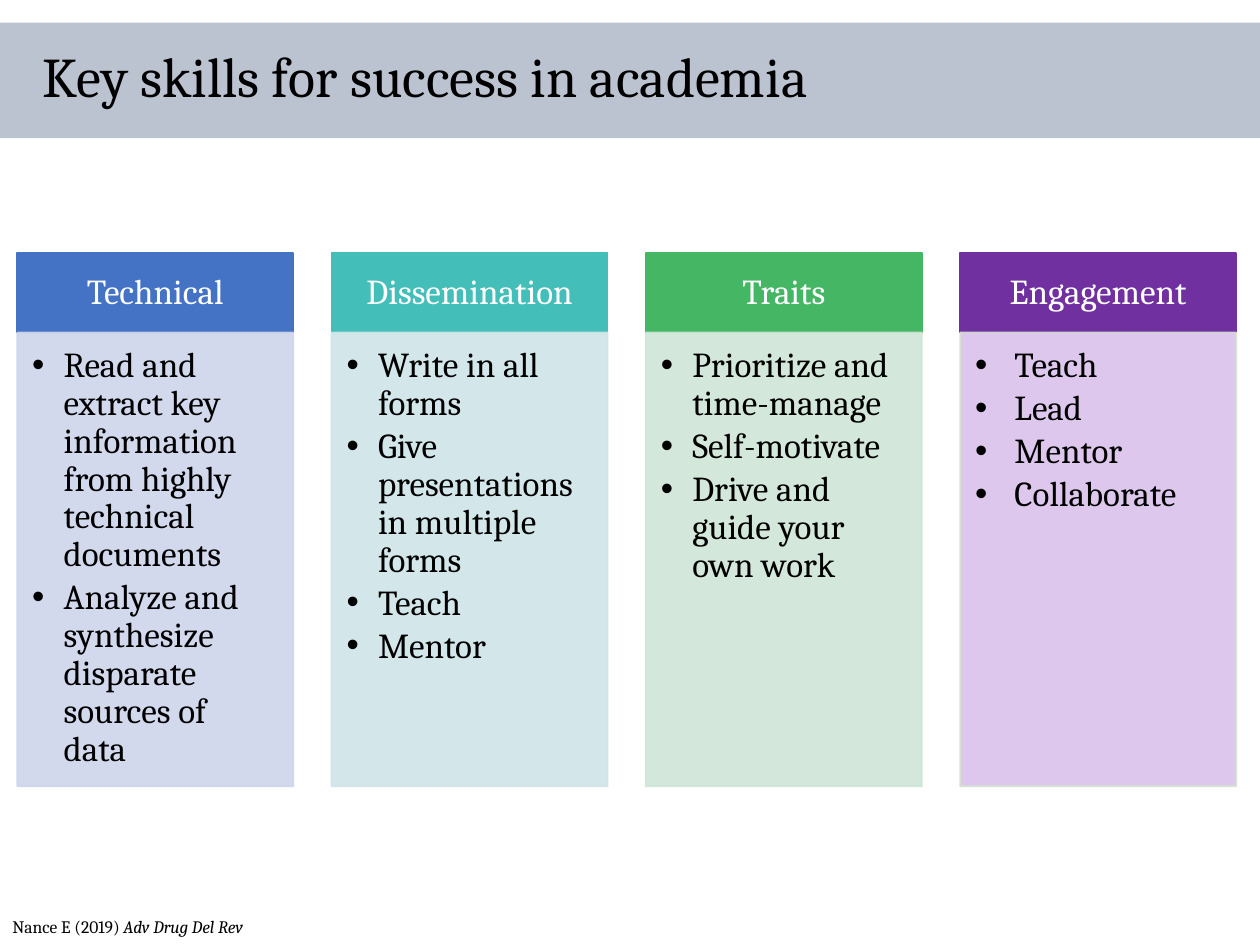
from lxml.etree import SubElement
from pptx import Presentation
from pptx.dml.color import RGBColor
from pptx.enum.shapes import MSO_SHAPE
from pptx.enum.text import MSO_ANCHOR, MSO_AUTO_SIZE, PP_ALIGN
from pptx.oxml.ns import qn
from pptx.util import Pt

COLORS = {
    "black": "000000", "white": "FFFFFF", "band": "203864",
    "blue": "4472C4", "pale blue": "CFD5EA",
    "teal": "43BEB9", "pale teal": "CFE5E8",
    "green": "45B664", "pale green": "CFE5D8",
    "purple": "7030A0", "pale purple": "DAC2EC", "purple edge": "D5E3CF",
}

# heading, heading color, list color, list edge color, list indent, skills
COLUMNS = [
    ("Technical", "blue", "pale blue", "pale blue", 18, [
        "Read and extract key information from highly technical documents",
        "Analyze and synthesize disparate sources of data"]),
    ("Dissemination", "teal", "pale teal", "pale teal", 18, [
        "Write in all forms", "Give presentations in multiple forms",
        "Teach", "Mentor"]),
    ("Traits", "green", "pale green", "pale green", 18, [
        "Prioritize and time-manage", "Self-motivate",
        "Drive and guide your own work"]),
    ("Engagement", "purple", "pale purple", "purple edge", 22.5, [
        "Teach", "Lead", "Mentor", "Collaborate"]),
]
COLUMN_LEFT, COLUMN_STEP, COLUMN_WIDTH = 9.9, 179.6, 157.7
HEADING_TOP, HEADING_HEIGHT, LIST_HEIGHT = 144.8, 45.3, 259.3


class SlideBuilder:
    font_name = "Cambria"

    def __init__(self, slide):
        self.slide = slide

    def set_opacity(self, fill, percent):
        color = fill.fore_color._xFill.find(qn("a:srgbClr"))
        SubElement(color, qn("a:alpha"), val=str(percent * 1000))

    def format_text(self, frame, size, color, margins, anchor, align=PP_ALIGN.LEFT,
                    line_spacing=0.9):
        frame.word_wrap = True
        frame.vertical_anchor = anchor
        (frame.margin_left, frame.margin_top,
         frame.margin_right, frame.margin_bottom) = map(Pt, margins)
        for paragraph in frame.paragraphs:
            paragraph.alignment = align
            paragraph.line_spacing = line_spacing
            for run in paragraph.runs:
                run.font.name = self.font_name
                run.font.size = Pt(size)
                run.font.color.rgb = RGBColor.from_string(COLORS[color])

    def rectangle(self, left, top, width, height, color, edge=None, opacity=100):
        shape = self.slide.shapes.add_shape(
            MSO_SHAPE.RECTANGLE, Pt(left), Pt(top), Pt(width), Pt(height))
        shape.shadow.inherit = False
        fills = [shape.fill]
        if edge:
            shape.line.width = Pt(1)
            fills.append(shape.line.fill)
        else:
            shape.line.fill.background()
        for fill, name in zip(fills, (color, edge)):
            fill.solid()
            fill.fore_color.rgb = RGBColor.from_string(COLORS[name])
            if opacity < 100:
                self.set_opacity(fill, opacity)
        return shape

    def title(self, text):
        title = self.slide.shapes.title
        title.left, title.top, title.width, title.height = map(Pt, (17.3, 13, 702.7, 65))
        title.text_frame.text = text
        title.text_frame.auto_size = MSO_AUTO_SIZE.NONE
        self.format_text(title.text_frame, 32, "black", (7.2, 3.6, 7.2, 3.6),
                         MSO_ANCHOR.MIDDLE)
        band = self.rectangle(0, 13, 720, 66, "band", opacity=30)
        title.element.addprevious(band.element)

    def heading(self, left, text, color):
        shape = self.rectangle(left, HEADING_TOP, COLUMN_WIDTH, HEADING_HEIGHT,
                               color, color)
        shape.text_frame.text = text
        self.format_text(shape.text_frame, 20, "white", (11.2, 6.4, 11.2, 6.4),
                         MSO_ANCHOR.MIDDLE, PP_ALIGN.CENTER)

    def bullet_list(self, left, items, color, edge, indent):
        shape = self.rectangle(left, HEADING_TOP + HEADING_HEIGHT, COLUMN_WIDTH,
                               LIST_HEIGHT, color, edge, opacity=90)
        frame = shape.text_frame
        frame.text = "\n".join(items)
        self.format_text(frame, 20, "black", (8.5, 8.5, 11.4, 12.8), MSO_ANCHOR.TOP)
        for paragraph in frame.paragraphs:
            paragraph.space_after = Pt(3)
            properties = paragraph._p.get_or_add_pPr()
            properties.set("marL", str(Pt(indent)))
            properties.set("indent", str(-Pt(indent)))
            SubElement(properties, qn("a:buFont"), typeface="Arial")
            SubElement(properties, qn("a:buChar"), char="•")

    def citation(self, author, journal):
        box = self.slide.shapes.add_textbox(Pt(0), Pt(520), Pt(235.4), Pt(19.4))
        paragraph = box.text_frame.paragraphs[0]
        paragraph.add_run().text = author
        journal_run = paragraph.add_run()
        journal_run.text = journal
        journal_run.font.italic = True
        self.format_text(box.text_frame, 10, "black", (7.2, 3.6, 7.2, 3.6),
                         MSO_ANCHOR.TOP, line_spacing=1.0)


def main():
    presentation = Presentation()
    presentation.slide_width, presentation.slide_height = Pt(720), Pt(540)
    title_only = presentation.slide_layouts[5]
    builder = SlideBuilder(presentation.slides.add_slide(title_only))

    builder.title("Key skills for success in academia")
    for index, (heading, color, list_color, edge, indent, skills) in enumerate(COLUMNS):
        left = COLUMN_LEFT + index * COLUMN_STEP
        builder.heading(left, heading, color)
        builder.bullet_list(left, skills, list_color, edge, indent)
    builder.citation("Nance E (2019) ", "Adv Drug Del Rev")

    presentation.save("out.pptx")


if __name__ == "__main__":
    main()
